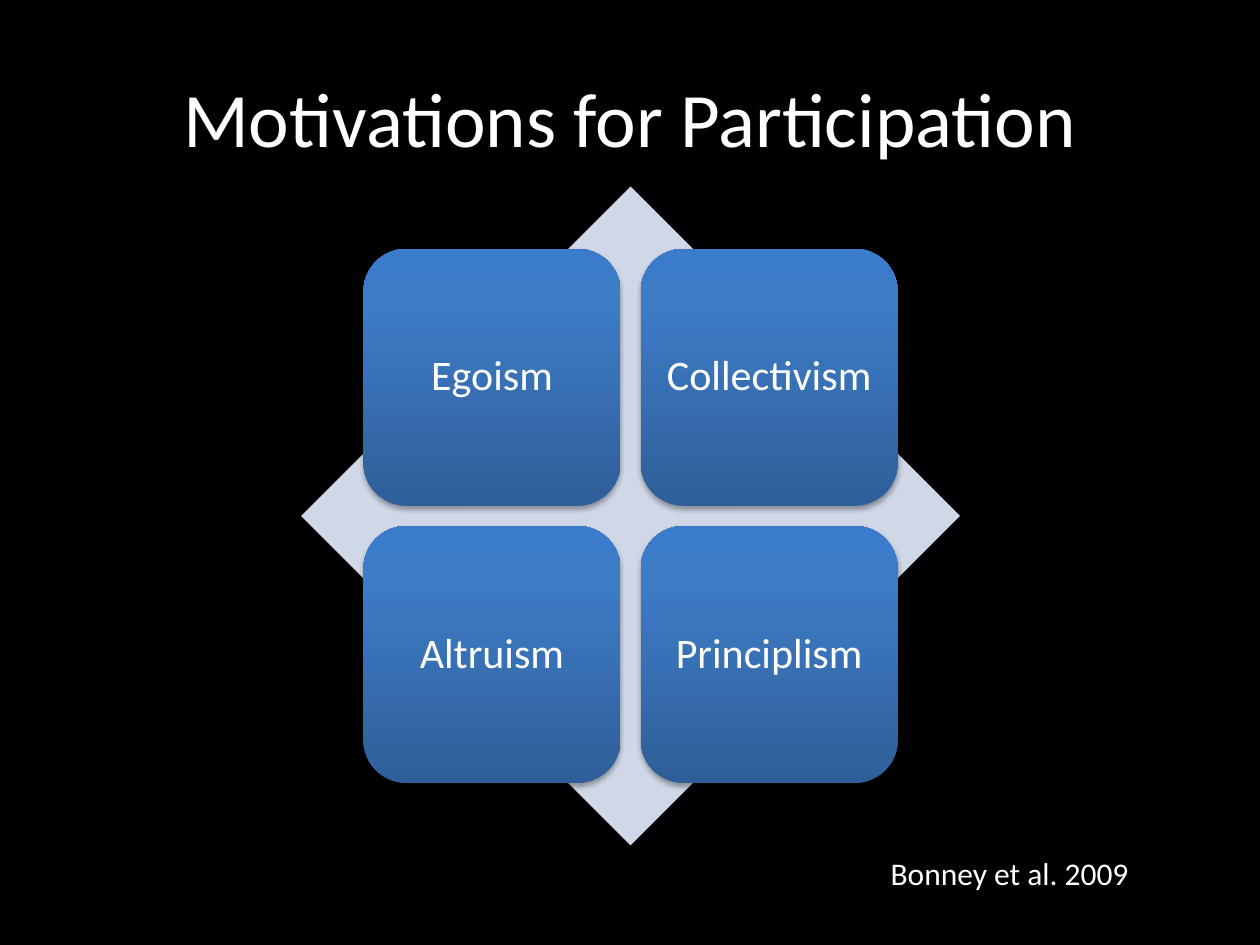
from pptx import Presentation
from pptx import util as u
from pptx.dml.color import RGBColor
from pptx.enum import shapes, text
from pptx.oxml import parse_xml
from pptx.oxml.ns import nsdecls, qn

# Content
TITLE = "Motivations for Participation"
MOTIVATIONS = [("Egoism", "Collectivism"), ("Altruism", "Principlism")]
CITATION = "Bonney et al. 2009"

# Look
FONT = "Calibri"
BLACK = RGBColor(0x00, 0x00, 0x00)
WHITE = RGBColor(0xFF, 0xFF, 0xFF)
PALE_BLUE = RGBColor(0xD0, 0xD8, 0xE8)
TILE_STOPS = [
    (0, RGBColor(0x2F, 0x5F, 0x99)),
    (80, RGBColor(0x3D, 0x7C, 0xC7)),
    (100, RGBColor(0x3A, 0x7C, 0xCB)),
]

# Layout in inches
DIAMOND_LEFT, DIAMOND_TOP, DIAMOND_SIZE = 2.39, 1.48, 5.23
TILE_SIZE, TILE_GAP = 2.04, 0.16
TILE_MARGIN = (DIAMOND_SIZE - 2 * TILE_SIZE - TILE_GAP) / 2


def write(shape, words, size, align=None, anchor=None, wrap=True, spacing=None):
    frame = shape.text_frame
    frame.word_wrap = wrap
    if anchor is not None:
        frame.vertical_anchor = anchor
    paragraph = frame.paragraphs[0]
    paragraph.text = words
    paragraph.alignment = align
    paragraph.line_spacing = spacing
    font = paragraph.runs[0].font
    font.name, font.size, font.color.rgb = FONT, u.Pt(size), WHITE
    return frame


def add_block(group, kind, left, top, size):
    """Add a square block with no outline and a soft shadow below it."""
    block = group.shapes.add_shape(
        kind, u.Inches(left), u.Inches(top), u.Inches(size), u.Inches(size))
    block.line.fill.background()
    block.shadow.inherit = False
    effects = block.element.spPr.find(qn("a:effectLst"))
    effects.append(parse_xml(
        f'<a:outerShdw {nsdecls("a")} blurRad="{u.Pt(3.1)}" dist="{u.Pt(1.8)}" '
        'dir="5400000" rotWithShape="0"><a:srgbClr val="000000">'
        '<a:alpha val="35000"/></a:srgbClr></a:outerShdw>'))
    return block


def fill_gradient(shape, stops):
    """Fill with colour stops running from the bottom to the top."""
    shape.fill.gradient()
    shape.fill.gradient_angle = 90
    stop_list = shape.element.spPr.find(qn("a:gradFill")).find(qn("a:gsLst"))
    for old in list(stop_list):
        stop_list.remove(old)
    for percent, color in stops:
        stop_list.append(parse_xml(
            f'<a:gs {nsdecls("a")} pos="{percent * 1000}">'
            f'<a:srgbClr val="{color}"/></a:gs>'))


prs = Presentation()
prs.slide_width, prs.slide_height = u.Inches(10), u.Inches(7.5)
slide = prs.slides.add_slide(prs.slide_layouts[5])
slide.background.fill.solid()
slide.background.fill.fore_color.rgb = BLACK

# Title
title = slide.shapes.title
title.left, title.top = u.Inches(0.5), u.Inches(0.3)
title.width, title.height = u.Inches(9), u.Inches(1.25)
write(title, TITLE, 44, align=text.PP_ALIGN.CENTER, anchor=text.MSO_ANCHOR.MIDDLE)

# Diamond behind the matrix
matrix = slide.shapes.add_group_shape()
diamond = add_block(matrix, shapes.MSO_SHAPE.DIAMOND,
                    DIAMOND_LEFT, DIAMOND_TOP, DIAMOND_SIZE)
diamond.fill.solid()
diamond.fill.fore_color.rgb = PALE_BLUE

# Two by two tiles, centred on the diamond
for row, motivations in enumerate(MOTIVATIONS):
    for column, motivation in enumerate(motivations):
        tile = add_block(
            matrix, shapes.MSO_SHAPE.ROUNDED_RECTANGLE,
            DIAMOND_LEFT + TILE_MARGIN + column * (TILE_SIZE + TILE_GAP),
            DIAMOND_TOP + TILE_MARGIN + row * (TILE_SIZE + TILE_GAP),
            TILE_SIZE)
        fill_gradient(tile, TILE_STOPS)
        frame = write(tile, motivation, 24, align=text.PP_ALIGN.CENTER,
                      anchor=text.MSO_ANCHOR.MIDDLE, spacing=0.9)
        frame.margin_left = frame.margin_right = u.Inches(0.1)
        frame.margin_top = frame.margin_bottom = u.Inches(0.1)

# Citation
citation = slide.shapes.add_textbox(
    u.Inches(6.97), u.Inches(6.73), u.Inches(2.18), u.Inches(0.4))
frame = write(citation, CITATION, 18, wrap=False)
frame.auto_size = text.MSO_AUTO_SIZE.SHAPE_TO_FIT_TEXT

prs.save("out.pptx")
